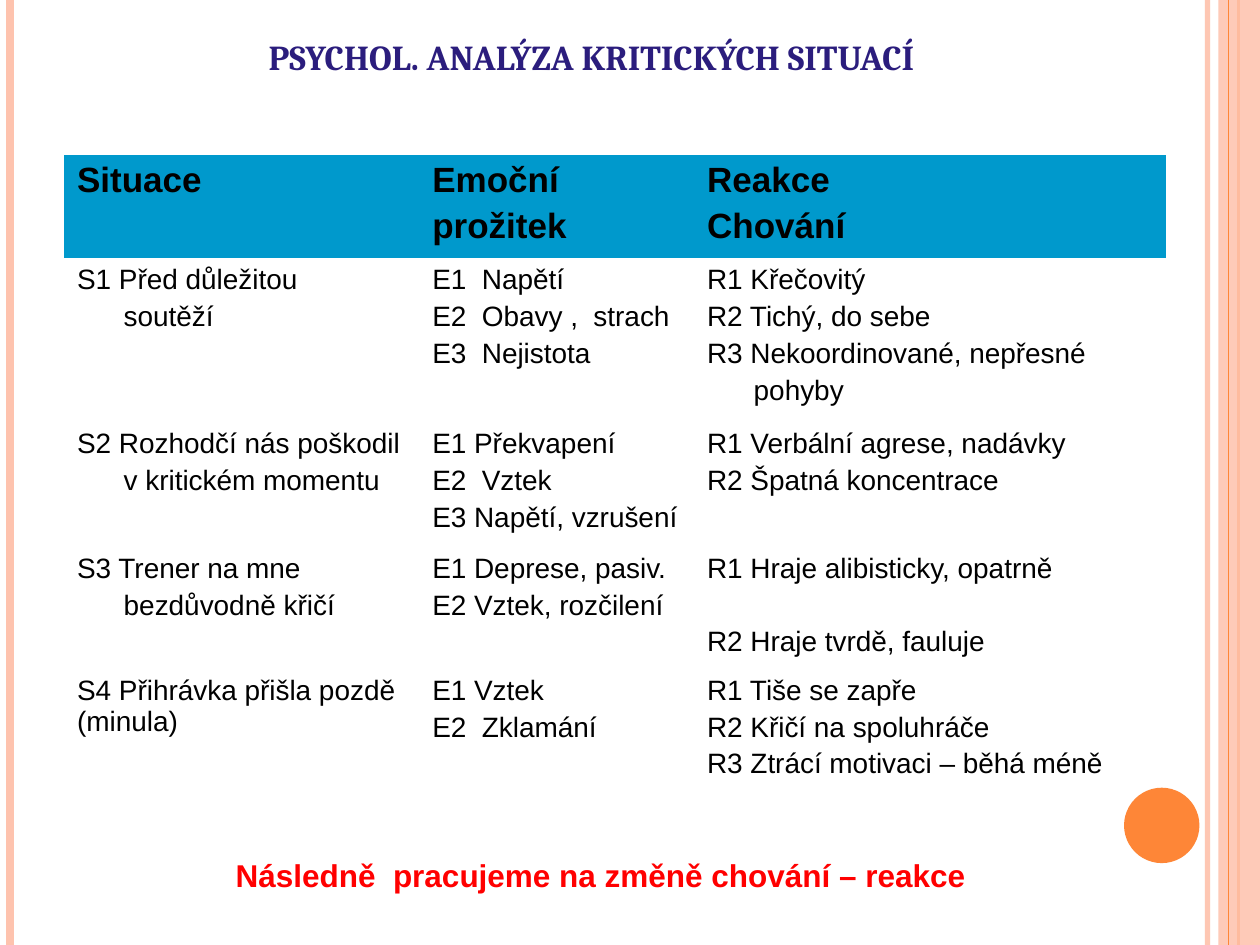
from dataclasses import dataclass
from typing import Optional

from lxml.etree import SubElement
from pptx import Presentation
from pptx.dml.color import RGBColor as RGB
from pptx.enum.shapes import MSO_CONNECTOR as CONN, MSO_SHAPE as SHAPE
from pptx.enum.text import MSO_ANCHOR as ANCHOR, MSO_AUTO_SIZE as AUTO, PP_ALIGN as ALIGN
from pptx.oxml.ns import qn
from pptx.util import Cm, Pt


@dataclass(frozen=True)
class Theme:
    peach: str = "FEC3AE"
    orange: str = "FE8637"
    header: str = "0099CC"
    title: str = "2B1D7D"
    text: str = "000000"
    accent: str = "FF0000"
    heading_font: str = "Cambria"
    body_font: str = "Arial"
    title_size: int = 20
    header_size: int = 20
    cell_size: int = 16
    note_size: int = 18


@dataclass(frozen=True)
class Rule:
    x: float
    color: str
    width: float
    alpha: Optional[int] = None


@dataclass(frozen=True)
class Line:
    text: str
    indent: float = 0
    gap: float = 0


T = Theme()
SLIDE_W, SLIDE_H = 25.4, 19.05
NO_GRID_STYLE = "{2D5ABB26-0587-4C30-8999-92F81FD0307C}"
COL_WIDTHS = (7.16, 5.54, 9.5)
ROW_HEIGHTS = (1.97, 3.1, 2.36, 2.36, 3.37)


def hanging(text: str) -> Line:
    return Line(text, indent=0.94)


ROWS = (
    (("Situace",), ("Emoční", "prožitek"), ("Reakce", "Chování")),
    (("S1 Před důležitou", hanging("soutěží")),
     ("E1  Napětí", "E2  Obavy ,  strach", "E3  Nejistota"),
     ("R1 Křečovitý", "R2 Tichý, do sebe", "R3 Nekoordinované, nepřesné",
      hanging("pohyby"))),
    (("S2 Rozhodčí nás poškodil", hanging("v kritickém momentu")),
     ("E1 Překvapení", "E2  Vztek", "E3 Napětí, vzrušení"),
     ("R1 Verbální agrese, nadávky", "R2 Špatná koncentrace")),
    (("S3 Trener na mne", hanging("bezdůvodně křičí")),
     ("E1 Deprese, pasiv.", "E2 Vztek, rozčilení"),
     ("R1 Hraje alibisticky, opatrně", Line("R2 Hraje tvrdě, fauluje", gap=21))),
    (("S4 Přihrávka přišla pozdě (minula)",),
     ("E1 Vztek", "E2  Zklamání"),
     ("R1 Tiše se zapře", "R2 Křičí na spoluhráče",
      "R3 Ztrácí motivaci – běhá méně")),
)


def set_alpha(fill_parent, percent: int) -> None:
    clr = next(fill_parent.iter(qn("a:srgbClr")))
    SubElement(clr, qn("a:alpha")).set("val", str(percent * 1000))


def write(p, text: str, *, size: float, color: str = T.text, font: str = T.body_font,
          bold: bool = False, before: float = 0, indent: float = 0) -> None:
    p.alignment = ALIGN.LEFT
    p.space_before = Pt(before)
    if indent:
        p._p.get_or_add_pPr().set("marL", str(Cm(indent)))
    r = p.add_run()
    r.text = text
    f = r.font
    f.name, f.size, f.bold = font, Pt(size), bold
    f.color.rgb = RGB.from_string(color)


def place(sp, x: float, y: float, w: float, h: float) -> None:
    sp.left, sp.top, sp.width, sp.height = Cm(x), Cm(y), Cm(w), Cm(h)


def add_rule(slide, rule: Rule) -> None:
    ln = slide.shapes.add_connector(CONN.STRAIGHT, Cm(rule.x), 0, Cm(rule.x), Cm(SLIDE_H))
    ln.line.color.rgb = RGB.from_string(rule.color)
    ln.line.width = Pt(rule.width)
    sp_pr = ln._element.spPr
    if rule.alpha:
        set_alpha(sp_pr, rule.alpha)
    SubElement(sp_pr, qn("a:effectLst"))


def add_solid(slide, kind, x: float, y: float, w: float, h: float, color: str,
              alpha: Optional[int] = None) -> None:
    sp = slide.shapes.add_shape(kind, Cm(x), Cm(y), Cm(w), Cm(h))
    sp.shadow.inherit = False
    sp.fill.solid()
    sp.fill.fore_color.rgb = RGB.from_string(color)
    sp.line.fill.background()
    if alpha:
        set_alpha(sp._element.spPr, alpha)


def add_decoration(slide) -> None:
    add_rule(slide, Rule(24.34, T.peach, 3, alpha=93))
    add_rule(slide, Rule(0.21, T.peach, 4.5))
    add_rule(slide, Rule(24.97, T.orange, 1.5))
    add_solid(slide, SHAPE.RECTANGLE, 24.56, 0, SLIDE_W - 24.56, SLIDE_H, T.peach, alpha=87)
    add_rule(slide, Rule(24.77, T.orange, 0.75))
    add_solid(slide, SHAPE.OVAL, 22.66, 15.88, 1.52, 1.52, T.orange)


def fill_cell(cell, lines, is_header: bool) -> None:
    if is_header:
        cell.fill.solid()
        cell.fill.fore_color.rgb = RGB.from_string(T.header)
    else:
        cell.fill.background()
    size = T.header_size if is_header else T.cell_size
    tf = cell.text_frame
    for i, item in enumerate(lines):
        line = item if isinstance(item, Line) else Line(item)
        p = tf.add_paragraph() if i else tf.paragraphs[0]
        write(p, line.text, size=size, bold=is_header,
              before=0.2 * size + line.gap, indent=line.indent)


def add_situations(slide) -> None:
    frame = slide.shapes.add_table(len(ROWS), len(COL_WIDTHS), Cm(1.3), Cm(3.12),
                                   Cm(sum(COL_WIDTHS)), Cm(sum(ROW_HEIGHTS)))
    table = frame.table
    table.first_row = table.horz_banding = False
    next(frame._element.iter(qn("a:tableStyleId"))).text = NO_GRID_STYLE
    for col, width in zip(table.columns, COL_WIDTHS):
        col.width = Cm(width)
    for i, (row, height, cells) in enumerate(zip(table.rows, ROW_HEIGHTS, ROWS)):
        row.height = Cm(height)
        for cell, lines in zip(row.cells, cells):
            fill_cell(cell, lines, is_header=i == 0)


def add_title(slide) -> None:
    sp = slide.shapes.title
    place(sp, 5.16, 0.58, 16.76, 1.12)
    tf = sp.text_frame
    tf.word_wrap = True
    tf.auto_size = AUTO.SHAPE_TO_FIT_TEXT
    tf.vertical_anchor = ANCHOR.TOP
    write(tf.paragraphs[0], "PSYCHOL. ANALÝZA KRITICKÝCH SITUACÍ", size=T.title_size,
          color=T.title, font=T.heading_font, bold=True)


def add_note(slide) -> None:
    sp = slide.shapes.add_textbox(Cm(4.5), Cm(17.13), Cm(15.54), Cm(1.02))
    tf = sp.text_frame
    tf.word_wrap = False
    tf.auto_size = AUTO.SHAPE_TO_FIT_TEXT
    write(tf.paragraphs[0], "Následně  pracujeme na změně chování – reakce",
          size=T.note_size, color=T.accent, bold=True)


def main() -> None:
    prs = Presentation()
    prs.slide_width, prs.slide_height = Cm(SLIDE_W), Cm(SLIDE_H)
    slide = prs.slides.add_slide(prs.slide_layouts[5])
    add_decoration(slide)
    add_situations(slide)
    add_title(slide)
    add_note(slide)
    prs.save("out.pptx")


if __name__ == "__main__":
    main()
